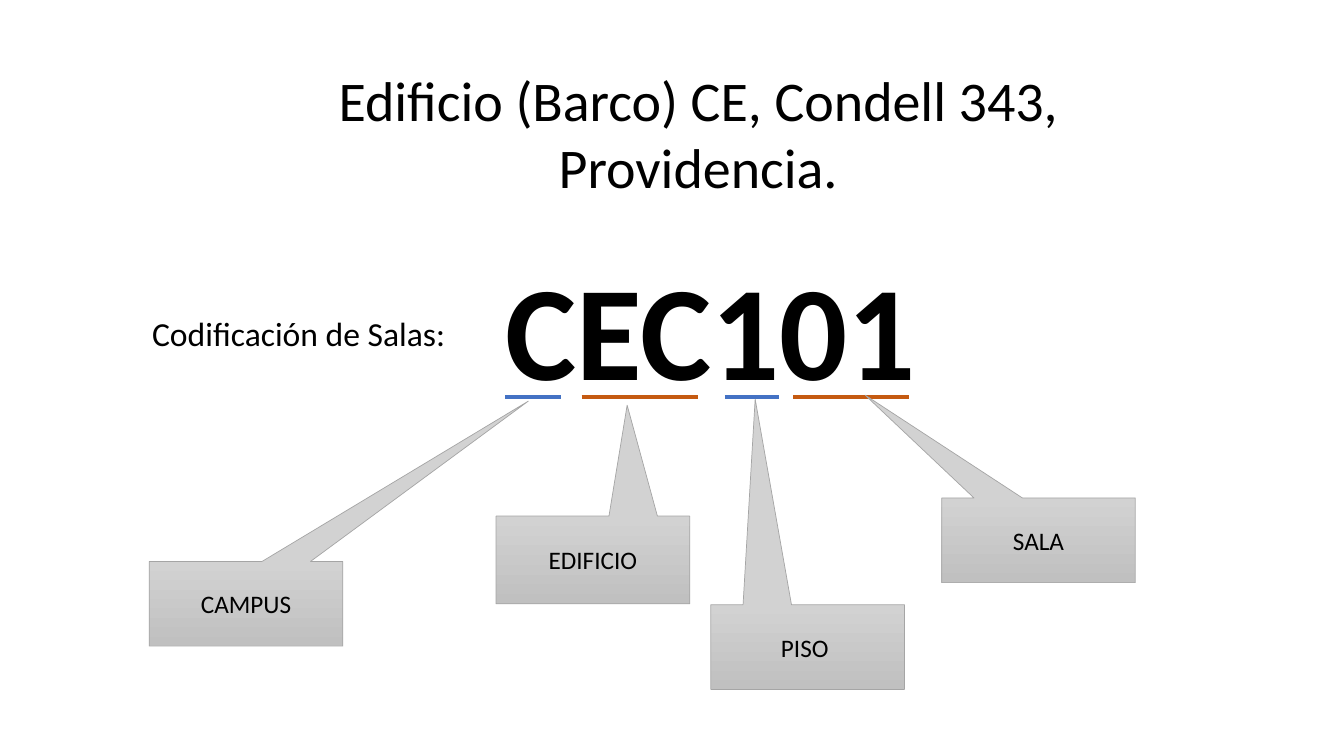
from lxml import etree
from pptx import Presentation
from pptx.dml.color import RGBColor
from pptx.enum.shapes import MSO_CONNECTOR, MSO_SHAPE
from pptx.enum.text import MSO_ANCHOR, PP_ALIGN
from pptx.oxml.ns import qn
from pptx.util import Inches, Pt

STRAIGHT = MSO_CONNECTOR.STRAIGHT
CALLOUT = MSO_SHAPE.RECTANGULAR_CALLOUT
CENTER = PP_ALIGN.CENTER
TOP = MSO_ANCHOR.TOP
MIDDLE = MSO_ANCHOR.MIDDLE

FONT = "Calibri"
COLORS = {
    "text": "000000",
    "blue": "4472C4",
    "orange": "C55A11",
    "callout_light": "D2D2D2",
    "callout_dark": "C0C0C0",
    "callout_line": "A5A5A5",
}
UNDERLINE_Y = 3.94
CALLOUT_WIDTH = 1.92

# Start, end and colour of the line under each part of the code
UNDERLINES = [
    (5.01, 5.56, "blue"),
    (5.77, 6.92, "orange"),
    (7.19, 7.73, "blue"),
    (7.87, 9.02, "orange"),
]
# Label, left, top, height and pointer tip
CALLOUTS = [
    ("CAMPUS", 1.48, 5.57, 0.84, (5.24, 3.98)),
    ("EDIFICIO", 4.92, 5.12, 0.87, (6.22, 4.02)),
    ("PISO ", 7.05, 6.0, 0.84, (7.49, 3.96)),
    ("SALA", 9.34, 4.94, 0.84, (8.58, 3.92)),
]


def color(name):
    return RGBColor.from_string(COLORS[name])


def write_text(shape, text, size, anchor=TOP, bold=False):
    frame = shape.text_frame
    frame.word_wrap = True
    frame.vertical_anchor = anchor
    paragraph = frame.paragraphs[0]
    paragraph.alignment = CENTER
    run = paragraph.add_run()
    run.text = text
    run.font.name = FONT
    run.font.size = Pt(size)
    run.font.bold = bold
    run.font.color.rgb = color("text")


def set_title(slide, text, left, top, width, height):
    title = slide.shapes.title
    title.left, title.top = Inches(left), Inches(top)
    title.width, title.height = Inches(width), Inches(height)
    write_text(title, text, 40)


def add_text(shapes, text, left, top, width, height, size, bold=False):
    box = shapes.add_textbox(Inches(left), Inches(top), Inches(width), Inches(height))
    write_text(box, text, size, bold=bold)


def add_underline(shapes, start, end, color_name):
    line = shapes.add_connector(
        STRAIGHT, Inches(start), Inches(UNDERLINE_Y), Inches(end), Inches(UNDERLINE_Y)
    )
    line.line.color.rgb = color(color_name)
    line.line.width = Pt(3)
    etree.SubElement(line._element.spPr, qn("a:effectLst"))


def add_callout(shapes, label, left, top, height, tip):
    shape = shapes.add_shape(
        CALLOUT, Inches(left), Inches(top), Inches(CALLOUT_WIDTH), Inches(height)
    )
    shape.shadow.inherit = False
    # The pointer is set as an offset from the centre, relative to the size
    shape.adjustments[0] = (tip[0] - left) / CALLOUT_WIDTH - 0.5
    shape.adjustments[1] = (tip[1] - top) / height - 0.5
    shape.fill.gradient()
    shape.fill.gradient_angle = 270
    for stop, name in zip(shape.fill.gradient_stops, ("callout_light", "callout_dark")):
        stop.color.rgb = color(name)
    shape.line.color.rgb = color("callout_line")
    shape.line.width = Pt(0.5)
    write_text(shape, label, 18, anchor=MIDDLE)


def main():
    presentation = Presentation()
    presentation.slide_width = Inches(13.33)
    presentation.slide_height = Inches(7.5)
    slide = presentation.slides.add_slide(presentation.slide_layouts[5])

    # Title and caption
    set_title(slide, "Edificio (Barco) CE, Condell 343, Providencia.", 3.14, 0.6, 7.57, 1.45)
    add_text(slide.shapes, "Codificación de Salas: ", 1.17, 3.05, 3.66, 1.18, 24)

    # Room code with its underlined parts
    room_code = slide.shapes.add_group_shape()
    add_text(room_code.shapes, "CEC101", 3.8, 2.39, 6.5, 1.72, 96, bold=True)
    for underline in UNDERLINES:
        add_underline(room_code.shapes, *underline)

    # Meaning of each part
    for callout in CALLOUTS:
        add_callout(slide.shapes, *callout)

    presentation.save("out.pptx")


if __name__ == "__main__":
    main()
